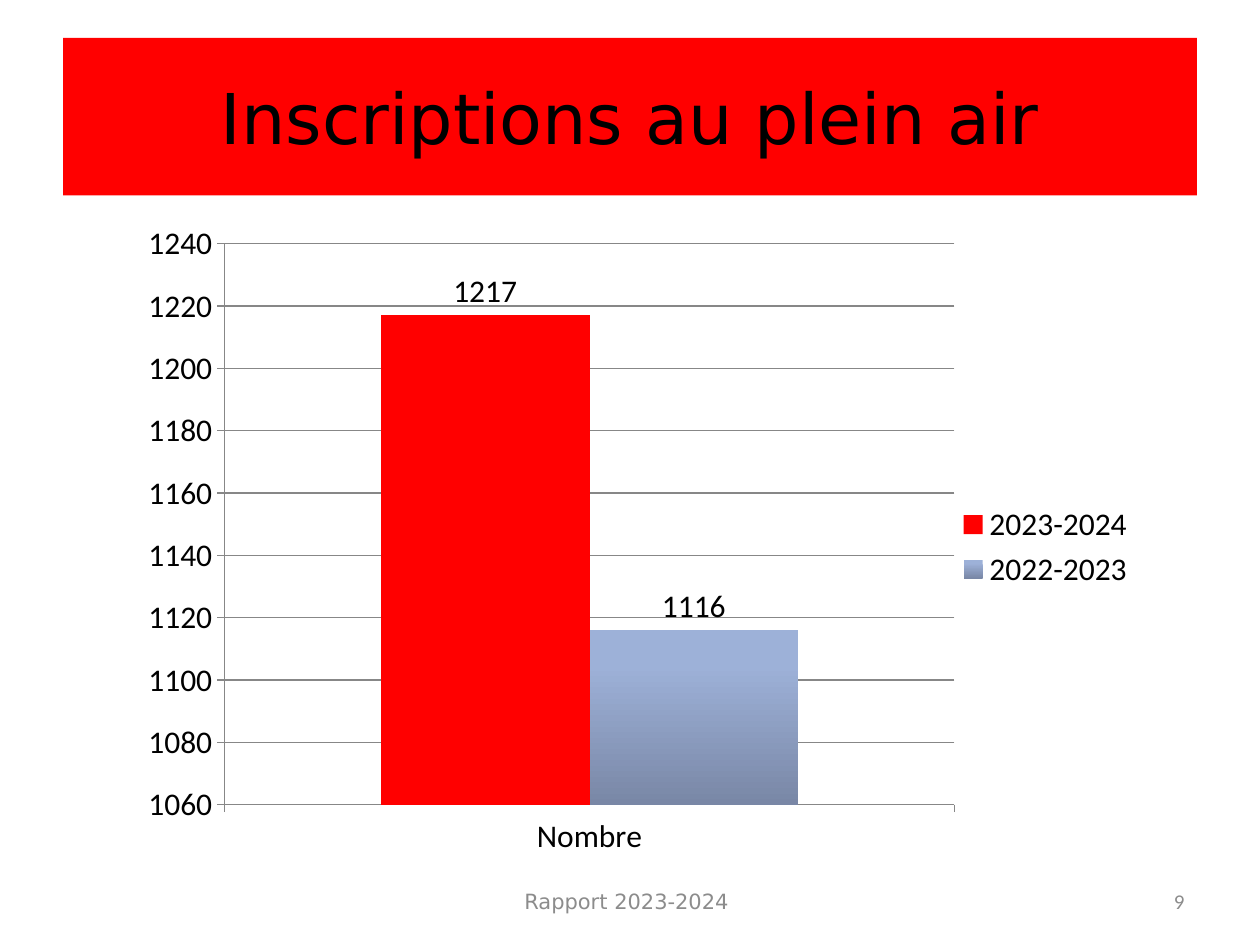
from lxml.etree import SubElement
from pptx import Presentation
from pptx.chart.data import CategoryChartData
from pptx.dml.color import RGBColor
from pptx.enum.chart import XL_CHART_TYPE as ChartType, XL_LABEL_POSITION as LabelPos
from pptx.enum.chart import XL_LEGEND_POSITION as LegendPos, XL_TICK_MARK as Tick
from pptx.enum.text import MSO_ANCHOR as Anchor, PP_ALIGN as Align
from pptx.oxml.ns import qn
from pptx.util import Pt

# Content
TITLE = "Inscriptions au plein air"
CATEGORIES = ["Nombre"]
ENROLMENTS = {"2023-2024": [1217], "2022-2023": [1116]}
COLORS = {"red": "FF0000", "text": "000000", "muted": "8C8C8C", "line": "878787",
          "blue_top": "9DB1D8", "blue_bottom": "7987A6"}

# Geometry: left, top, width, height in points
TITLE_BOX = (36, 21.6, 648, 90)
CHART_BOX = (42.5, 128.2, 613.4, 368.6)
PLOT = {"x": 0.14, "y": 0.03, "w": 0.68, "h": 0.87}
FOOTERS = [
    ("Rapport 2023-2024 ", (246, 500.4, 228, 28.8), Align.CENTER, "DejaVu Sans"),
    ("9", (516, 500.4, 168, 28.8), Align.RIGHT, "Calibri"),
]
SCALE = {"minimum_scale": 1060, "maximum_scale": 1240, "major_unit": 20}


def rgb(name):
    return RGBColor.from_string(COLORS[name])


def points(box):
    return [Pt(length) for length in box]


def set_font(font, face, size, color):
    for key, value in {"name": face, "size": Pt(size), "bold": False}.items():
        setattr(font, key, value)
    font.color.rgb = rgb(color)


def write(holder, text, align, face, size, color):
    frame = holder.text_frame
    frame.text = text
    frame.word_wrap = True
    frame.vertical_anchor = Anchor.MIDDLE
    paragraph = frame.paragraphs[0]
    paragraph.alignment = align
    set_font(paragraph.runs[0].font, face, size, color)


def rule(line):
    line.color.rgb = rgb("line")
    line.width = Pt(0.75)


deck = Presentation()
deck.slide_width, deck.slide_height = Pt(720), Pt(540)
slide = deck.slides.add_slide(deck.slide_layouts[5])

# Title band
title = slide.shapes.title
title.left, title.top, title.width, title.height = points(TITLE_BOX)
title.fill.solid()
title.fill.fore_color.rgb = rgb("red")
write(title, TITLE, Align.CENTER, "DejaVu Sans", 40, "text")

# Enrolment chart
enrolment_data = CategoryChartData()
enrolment_data.categories = CATEGORIES
for year, counts in ENROLMENTS.items():
    enrolment_data.add_series(year, counts)
chart = slide.shapes.add_chart(
    ChartType.COLUMN_CLUSTERED, *points(CHART_BOX), enrolment_data).chart
set_font(chart.font, "Calibri", 18, "text")
chart.has_title = False
chart.has_legend = True
chart.legend.position = LegendPos.RIGHT
chart.legend.include_in_layout = False

# Axes and gridlines
for axis in (chart.category_axis, chart.value_axis):
    axis.major_tick_mark = Tick.OUTSIDE
    axis.minor_tick_mark = Tick.NONE
    rule(axis.format.line)
for key, value in SCALE.items():
    setattr(chart.value_axis, key, value)
chart.value_axis.has_major_gridlines = True
rule(chart.value_axis.major_gridlines.format.line)

# Columns and value labels
columns = chart.plots[0]
columns.gap_width, columns.overlap = 150, 0
columns.vary_by_categories = False
for year in columns.series:
    year.invert_if_negative = False
    year.data_labels.show_value = True
    year.data_labels.position = LabelPos.OUTSIDE_END
current, previous = [year.format.fill for year in columns.series]
current.solid()
current.fore_color.rgb = rgb("red")
previous.gradient()
previous.gradient_angle = 270
for stop, color, place in zip(previous.gradient_stops,
                              ("blue_top", "blue_bottom"), (0.2, 1)):
    stop.color.rgb = rgb(color)
    stop.position = place

# Fixed inner plot area
plot_area = chart._chartSpace.chart.plotArea
layout = plot_area.find(qn("c:layout"))
if layout is None:
    layout = SubElement(plot_area, qn("c:layout"))
    plot_area.insert(0, layout)
manual = SubElement(layout, qn("c:manualLayout"))
settings = {"layoutTarget": "inner", "xMode": "edge", "yMode": "edge", **PLOT}
for tag, value in settings.items():
    SubElement(manual, qn("c:" + tag)).set("val", str(value))

# Footer and page number
for text, box, align, face in FOOTERS:
    write(slide.shapes.add_textbox(*points(box)), text, align, face, 12, "muted")

deck.save("out.pptx")
